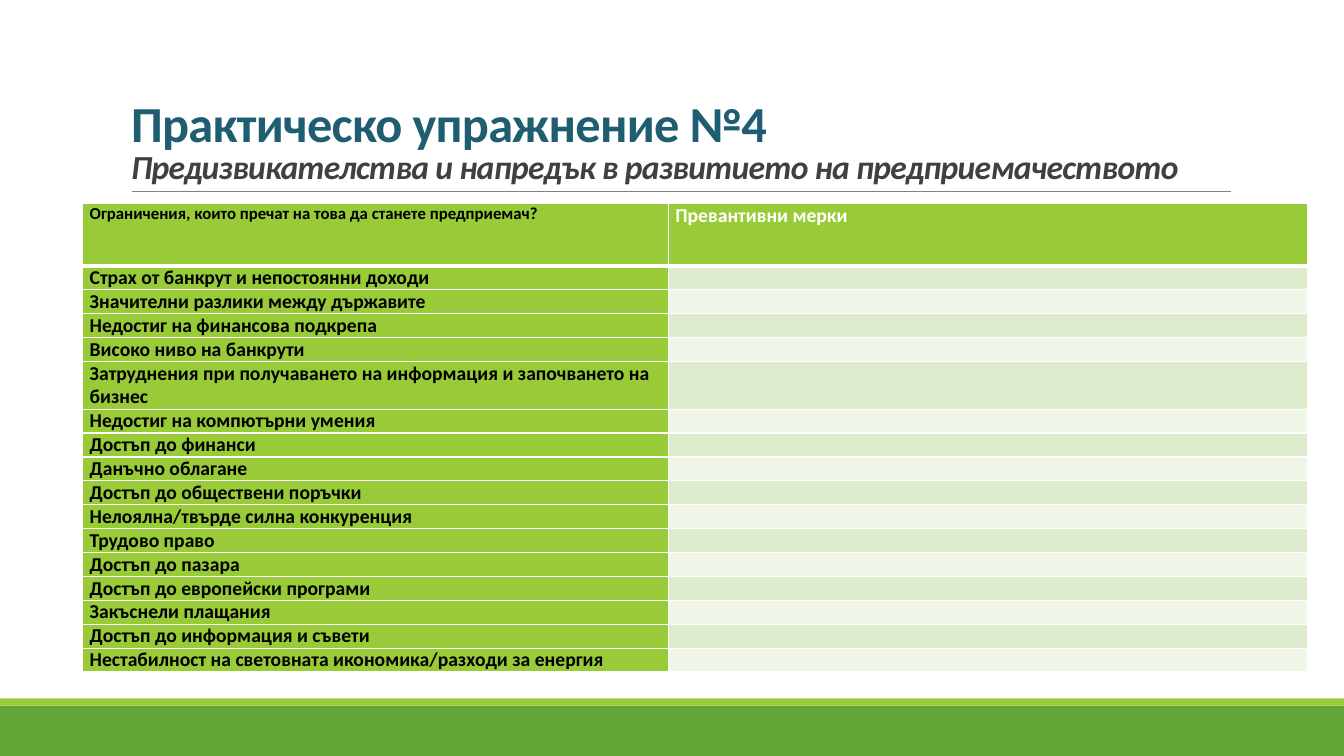
from lxml.etree import SubElement
from pptx import Presentation
from pptx.dml.color import RGBColor
from pptx.enum.shapes import MSO_CONNECTOR as Connector, MSO_SHAPE as Shape
from pptx.enum.text import MSO_ANCHOR as Anchor, MSO_AUTO_SIZE as AutoSize, PP_ALIGN as Align
from pptx.oxml.ns import qn
from pptx.util import Cm, Pt

COLORS = {
    "green": "63A537", "lime": "99CB38", "rule": "808080", "teal": "1E5E70",
    "grey": "404040", "black": "000000", "white": "FFFFFF",
    "band_dark": "DEECCE", "band_light": "EFF6E8",
}
CONSTRAINTS = [
    "Страх от банкрут и непостоянни доходи",
    "Значителни разлики между държавите",
    "Недостиг на финансова подкрепа",
    "Високо ниво на банкрути",
    "Затруднения при получаването на информация и започването на бизнес",
    "Недостиг на компютърни умения",
    "Достъп до финанси",
    "Данъчно облагане",
    "Достъп до обществени поръчки",
    "Нелоялна/твърде силна конкуренция",
    "Трудово право",
    "Достъп до пазара",
    "Достъп до европейски програми",
    "Закъснели плащания",
    "Достъп до информация и съвети",
    "Нестабилност на световната икономика/разходи за енергия",
]
TWO_LINE_ROW = 5


def rgb(name):
    return RGBColor.from_string(COLORS[name])


def write(paragraph, text, size=14, color="black", italic=False, spacing=0):
    run = paragraph.add_run()
    run.text = text
    run.font.name = "Calibri"
    run.font.size = Pt(size)
    run.font.bold = True
    run.font.italic = italic
    run.font.color.rgb = rgb(color)
    if spacing:
        run.font._element.set("spc", str(spacing))


prs = Presentation()
prs.slide_width, prs.slide_height = Cm(33.87), Cm(19.05)
slide = prs.slides.add_slide(prs.slide_layouts[5])

for top, height, color in [(17.78, 1.27, "green"), (17.6, 0.18, "lime")]:
    footer_band = slide.shapes.add_shape(Shape.RECTANGLE, 0, Cm(top), prs.slide_width, Cm(height))
    footer_band.shadow.inherit = False
    footer_band.fill.solid()
    footer_band.fill.fore_color.rgb = rgb(color)
    footer_band.line.fill.background()

title_rule = slide.shapes.add_connector(Connector.STRAIGHT, Cm(3.32), Cm(4.83), Cm(31.01), Cm(4.83))
title_rule.line.color.rgb = rgb("rule")
title_rule.line.width = Pt(0.5)
SubElement(title_rule._element.spPr, qn("a:effectLst"))

title = slide.shapes.title
title.left, title.top, title.width, title.height = Cm(3.05), Cm(0.79), Cm(27.94), Cm(4.04)
title.text_frame.auto_size = AutoSize.NONE
title.text_frame.word_wrap = True
title.text_frame.vertical_anchor = Anchor.BOTTOM
heading = title.text_frame.paragraphs[0]
heading.alignment = Align.LEFT
heading.line_spacing = 0.85
write(heading, "Практическо упражнение №4", size=36, color="teal", spacing=-50)
heading.add_line_break()
SubElement(heading._p.find(qn("a:br")), qn("a:rPr"), sz="3600")
write(heading, "Предизвикателства и напредък в развитието на предприемачеството",
      size=24, color="grey", italic=True, spacing=-50)

row_heights = [1.57] + [0.6] * len(CONSTRAINTS)
row_heights[TWO_LINE_ROW] = 1.2
table = slide.shapes.add_table(len(row_heights), 2, Cm(2.08), Cm(5.13),
                               Cm(30.86), Cm(sum(row_heights))).table
table.first_row = False
table.horz_banding = False
table.columns[0].width, table.columns[1].width = Cm(14.76), Cm(16.1)

for row_number, height in enumerate(row_heights):
    table.rows[row_number].height = Cm(height)
    is_header = row_number == 0
    band = "band_dark" if row_number % 2 else "band_light"
    for column in range(2):
        cell = table.cell(row_number, column)
        cell.margin_left = cell.margin_right = Cm(0.18)
        cell.margin_top = cell.margin_bottom = 0
        for side in ("lnL", "lnR", "lnT", "lnB"):
            thick = (is_header and side == "lnB") or (row_number == 1 and side == "lnT")
            border = SubElement(cell._tc.get_or_add_tcPr(), qn(f"a:{side}"), w=str(Pt(3 if thick else 1)))
            SubElement(SubElement(border, qn("a:solidFill")), qn("a:srgbClr"), val=COLORS["white"])
        cell.fill.solid()
        cell.fill.fore_color.rgb = rgb("lime" if is_header or column == 0 else band)
        paragraph = cell.text_frame.paragraphs[0]
        if is_header and column == 0:
            write(paragraph, "Ограничения, които пречат на това да станете предприемач?", size=12)
        elif is_header:
            write(paragraph, "Превантивни мерки", color="white")
        elif column == 0:
            write(paragraph, CONSTRAINTS[row_number - 1])
        else:
            SubElement(paragraph._p, qn("a:endParaRPr"), sz="1400")

prs.save("out.pptx")
